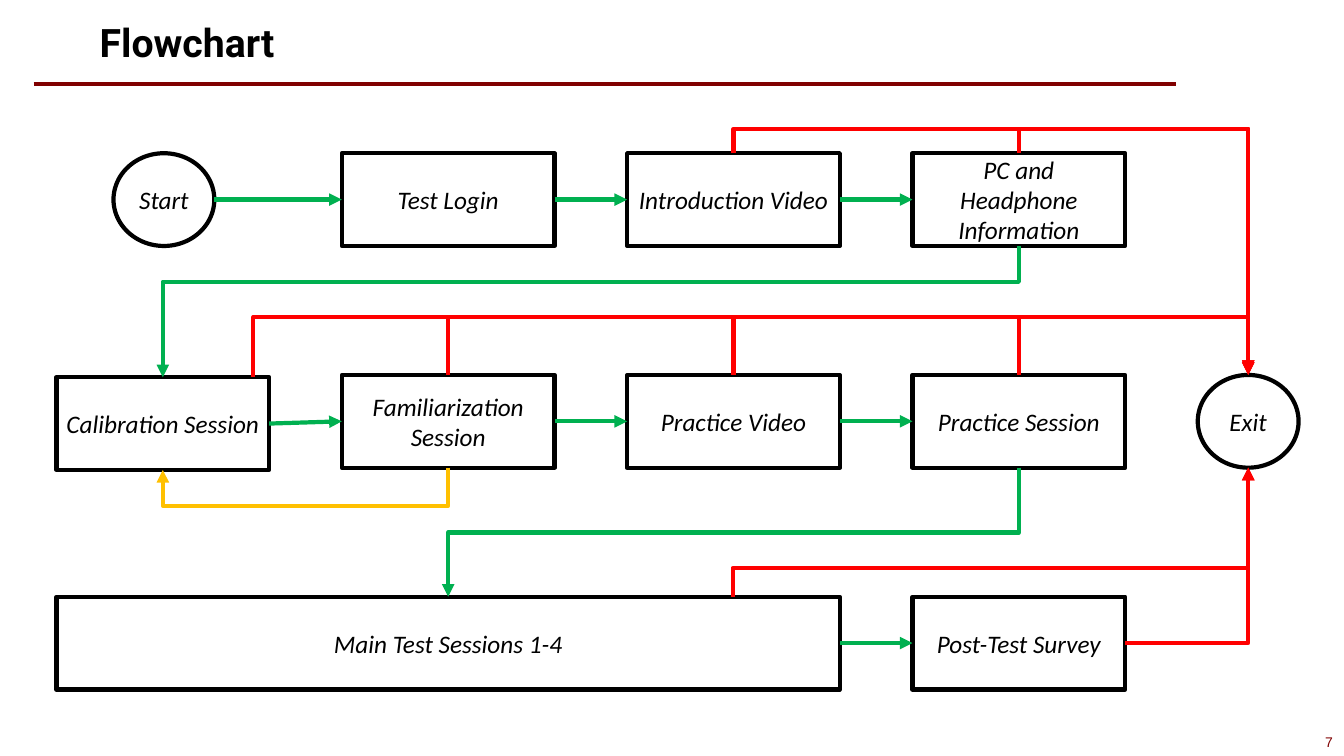
from lxml import etree
from pptx import Presentation
from pptx import util as u
from pptx.dml.color import RGBColor
from pptx.enum import shapes, text
from pptx.oxml import ns

BLACK, MAROON = "000000", "800000"
GREEN, AMBER, RED = "00B050", "FFC000", "FF0000"


def paint(target, color):
    target.rgb = RGBColor.from_string(color)


def child(parent, tag, **attributes):
    return etree.SubElement(parent, ns.qn(tag), attributes)


class Flowchart:
    """Draws flowchart elements on one slide, placed by grid columns and rows."""

    left, top = u.Inches(0.56), u.Inches(1.52)
    column, row = u.Inches(2.83), u.Inches(2.2)
    box_width, box_height, circle_width = u.Inches(2.11), u.Inches(0.92), u.Inches(1)
    stroke = u.Pt(3)

    def __init__(self, deck):
        self.width, self.height = deck.slide_width, deck.slide_height
        self.slide = deck.slides.add_slide(deck.slide_layouts[5])

    def x(self, columns):
        return round(self.left + columns * self.column)

    def y(self, rows):
        return round(self.top + rows * self.row)

    def label(self, holder, words, font_name, size, color, align, anchor, **style):
        frame = holder.text_frame
        frame.text, frame.word_wrap, frame.vertical_anchor = words, True, anchor
        paragraph = frame.paragraphs[0]
        paragraph.alignment = align
        font = paragraph.font
        font.name, font.size = font_name, u.Pt(size)
        font.bold, font.italic = style.get("bold", False), style.get("italic", False)
        paint(font.color, color)

    def title(self, words):
        heading = self.slide.shapes.title
        heading.left, heading.top = round(self.width / 15), 0
        heading.width, heading.height = round(self.width * 0.9), round(self.height * 0.11)
        self.label(heading, words, "Roboto", 28, BLACK, text.PP_ALIGN.LEFT,
                   text.MSO_ANCHOR.MIDDLE, bold=True)
        rule_y = round(self.height / 9)
        self.line((round(self.width / 40), rule_y), (round(self.width * 0.875), rule_y),
                  MAROON, arrow=False)

    def page_number(self, number):
        width, height = round(self.width * 0.06), round(self.height * 0.04)
        corner = self.slide.shapes.add_textbox(
            self.width - width, self.height - height, width, height)
        frame = corner.text_frame
        frame.margin_left = frame.margin_right = u.Inches(0.11)
        frame.margin_top = frame.margin_bottom = u.Inches(0.06)
        self.label(corner, number, "Arial", 10, MAROON, text.PP_ALIGN.RIGHT,
                   text.MSO_ANCHOR.BOTTOM)

    def node(self, words, left, row, width, preset):
        step = self.slide.shapes.add_shape(preset, left, self.y(row), width, self.box_height)
        step.shadow.inherit = False
        step.fill.background()
        step.line.width = self.stroke
        paint(step.line.color, BLACK)
        self.label(step, words, "Calibri", 18, BLACK, text.PP_ALIGN.CENTER,
                   text.MSO_ANCHOR.MIDDLE, italic=True)
        return step

    def box(self, words, column, row, span=1):
        width = self.box_width + (span - 1) * self.column
        return self.node(words, self.x(column), row, width, shapes.MSO_SHAPE.RECTANGLE)

    def circle(self, words, column, row):
        return self.node(words, self.x(column), row, self.circle_width,
                         shapes.MSO_SHAPE.OVAL)

    def line(self, start, end, color, kind=shapes.MSO_CONNECTOR.STRAIGHT, arrow=True):
        link = self.slide.shapes.add_connector(kind, *start, *end)
        link.line.width = self.stroke
        paint(link.line.color, color)
        properties = link._element.spPr
        if arrow:
            child(properties.find(ns.qn("a:ln")), "a:tailEnd", type="triangle")
        child(properties, "a:effectLst")
        return properties

    def arrow(self, source, target):
        self.line((source.left + source.width, source.top + source.height // 2),
                  (target.left, target.top + target.height // 2), GREEN)

    def corner(self, source, target, color):
        properties = self.line(
            (source.left + source.width, source.top + source.height // 2),
            (target.left + target.width // 2, target.top + target.height),
            color, shapes.MSO_CONNECTOR.ELBOW)
        properties.find(ns.qn("a:prstGeom")).set("prst", "bentConnector2")

    def detour(self, source, target, lane, color, column=None):
        lane_y = self.y(lane)
        x1 = source.left + source.width // 2 if column is None else self.x(column)
        x2 = target.left + target.width // 2
        y1, y2 = (step.top if lane_y < step.top else step.top + step.height
                  for step in (source, target))
        drop = (y2 - y1) or -u.Inches(0.02)
        length, breadth = abs(drop), abs(x2 - x1)
        left = (x1 + x2 - length) // 2
        top = (2 * y1 + drop - breadth) // 2
        properties = self.line((left, top), (left + length, top + breadth), color,
                               shapes.MSO_CONNECTOR.ELBOW)
        rightward, upward = x2 > x1, drop < 0
        transform = properties.find(ns.qn("a:xfrm"))
        transform.set("rot", str((270 if rightward and not upward else 90) * 60000))
        transform.set("flipH", str(int(rightward)))
        transform.set("flipV", str(int(rightward and upward)))
        geometry = properties.find(ns.qn("a:prstGeom"))
        guides = geometry.find(ns.qn("a:avLst"))
        if guides is None:
            guides = child(geometry, "a:avLst")
        bend = round((lane_y - y1) / drop * 100000)
        child(guides, "a:gd", name="adj1", fmla=f"val {bend}")


def main():
    deck = Presentation()
    deck.slide_width, deck.slide_height = u.Inches(13.33), u.Inches(7.5)
    chart = Flowchart(deck)
    chart.title("Flowchart")
    chart.page_number("7")

    start = chart.circle("Start", 0.2, 0)
    login, introduction, equipment = (
        chart.box(words, column, 0) for column, words in enumerate(
            ("Test Login", "Introduction Video", "PC and Headphone Information"), 1))
    calibration = chart.box("Calibration Session", 0, 1.01)
    familiarization, video, practice = (
        chart.box(words, column, 1) for column, words in enumerate(
            ("Familiarization Session", "Practice Video", "Practice Session"), 1))
    leave = chart.circle("Exit", 4, 1)
    sessions = chart.box("Main Test Sessions 1-4", 0, 2, span=3)
    survey = chart.box("Post-Test Survey", 3, 2)

    for sequence in ((start, login, introduction, equipment),
                     (calibration, familiarization, video, practice),
                     (sessions, survey)):
        for source, target in zip(sequence, sequence[1:]):
            chart.arrow(source, target)

    chart.detour(equipment, calibration, 0.58, GREEN)
    chart.detour(practice, sessions, 1.71, GREEN)
    chart.detour(familiarization, calibration, 1.59, AMBER)
    for source in (introduction, equipment):
        chart.detour(source, leave, -0.11, RED)
    chart.detour(calibration, leave, 0.74, RED, column=0.69)
    for source in (familiarization, video, practice):
        chart.detour(source, leave, 0.74, RED)
    chart.detour(sessions, leave, 1.87, RED, column=2.37)
    chart.corner(survey, leave, RED)
    deck.save("out.pptx")


if __name__ == "__main__":
    main()
